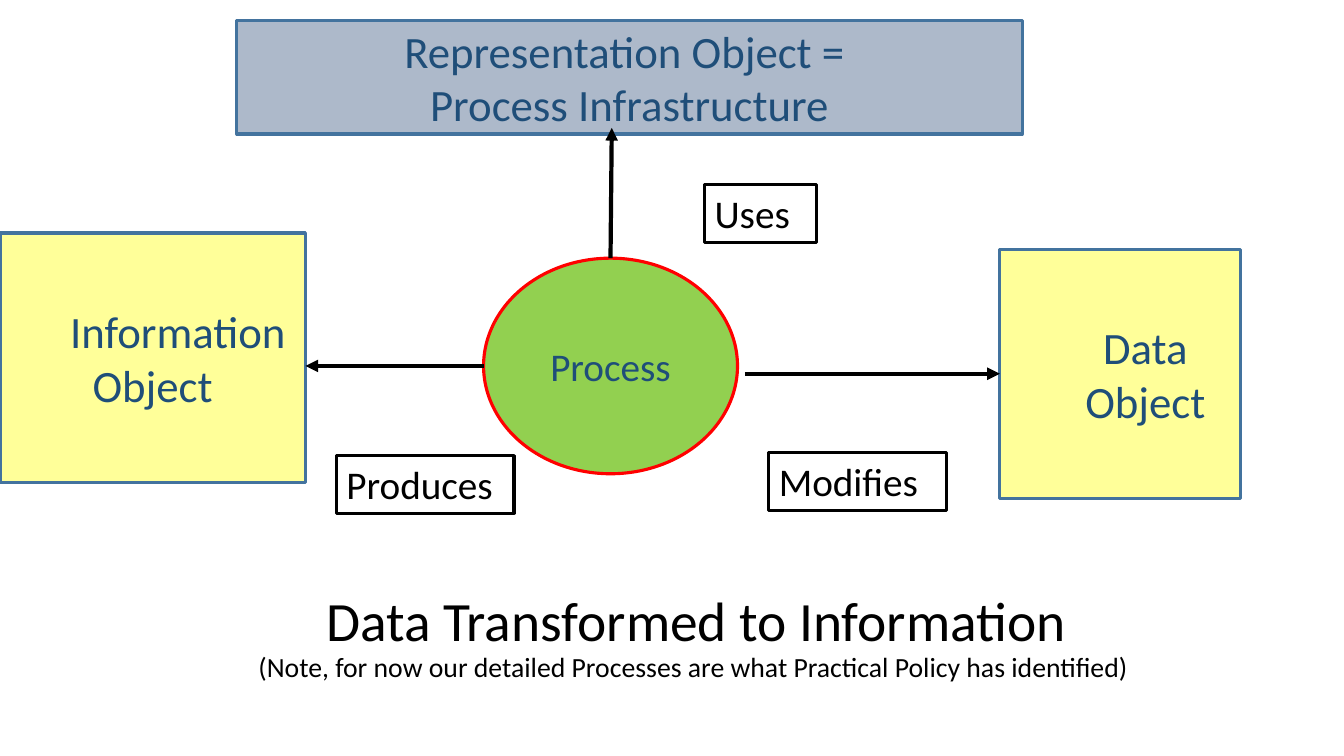
import pptx
import pptx.util
import pptx.dml.color
import pptx.enum.shapes
import pptx.enum.text
import pptx.oxml.ns
import lxml.etree

Pt = pptx.util.Pt
Shape = pptx.enum.shapes.MSO_SHAPE
Align = pptx.enum.text.PP_ALIGN
Anchor = pptx.enum.text.MSO_ANCHOR

FONT = "Calibri"
HUES = {"ink": "000000", "navy": "1F4E79", "edge": "43739E", "red": "FF0000",
        "yellow": "FFFF99", "slate": "ADB9CA", "green": "92D050"}

# Each line of text: (words, size, left indent)
TITLE = [("Data Transformed to Information", 39.6, 0),
         ("(Note, for now our detailed Processes are what Practical Policy"
          " has identified) ", 19.8, 0)]
TITLE_BOX = (169.2, 405.4, 656, 100.8)

# name: (preset, box, fill, edge, lines)
NODES = {
    "data": (Shape.RECTANGLE, (714.2, 178, 172, 178), "yellow", "edge",
             [("Data", 32, 36), ("Object", 32, 36)]),
    "frame": (Shape.RECTANGLE, (169.2, 14.4, 561, 81.4), "slate", "edge",
              [("Representation Object = ", 32, 0),
               ("Process Infrastructure", 32, 0)]),
    "process": (Shape.OVAL, (345.4, 184.4, 181.4, 154), "green", "red",
                [("Process", 28, 0)]),
    "info": (Shape.RECTANGLE, (0, 166.4, 218.2, 178), "yellow", "edge",
             [("Information", 32, 36), ("Object", 32, 0)]),
}
LABELS = [("Uses", 503.4, 131.8, 80), ("Modifies", 549.2, 323.4, 126.8),
          ("Produces", 240.4, 325.4, 126.8)]
LABEL_HIGH = 41.2

# (start, end, (node, site) joined at start, (node, site) joined at end)
ARROWS = [((532, 267), (714.2, 267), None, ("data", 1)),
          ((345.4, 261.4), (218.2, 261.4), None, None),
          ((436, 184.4), (437, 91.4), ("process", 0), None)]


def color(name):
    return pptx.dml.color.RGBColor.from_string(HUES[name])


def write(shape, lines, hue="ink", align=Align.CENTER, anchor=Anchor.MIDDLE,
          space=1.0):
    frame = shape.text_frame
    frame.word_wrap = True
    frame.vertical_anchor = anchor
    for i, (words, size, indent) in enumerate(lines):
        para = frame.add_paragraph() if i else frame.paragraphs[0]
        para.alignment = align
        para.line_spacing = space
        if indent:
            para._p.get_or_add_pPr().set("marL", str(Pt(indent)))
        run = para.add_run()
        run.text = words
        run.font.name = FONT
        run.font.size = Pt(size)
        run.font.color.rgb = color(hue)


def add_node(slide, preset, box, fill, edge):
    node = slide.shapes.add_shape(preset, *map(Pt, box))
    node.shadow.inherit = False
    if fill:
        node.fill.solid()
        node.fill.fore_color.rgb = color(fill)
    else:
        node.fill.background()
    node.line.color.rgb = color(edge)
    node.line.width = Pt(2.25)
    return node


def add_arrow(slide, start, end):
    arrow = slide.shapes.add_connector(
        pptx.enum.shapes.MSO_CONNECTOR.STRAIGHT, *map(Pt, start + end))
    arrow.line.color.rgb = color("ink")
    arrow.line.width = Pt(3)
    qn = pptx.oxml.ns.qn
    tail = lxml.etree.SubElement(arrow.line._get_or_add_ln(), qn("a:tailEnd"))
    tail.set("type", "triangle")
    lxml.etree.SubElement(arrow._element.spPr, qn("a:effectLst"))
    return arrow


def main():
    deck = pptx.Presentation()
    deck.slide_width, deck.slide_height = Pt(960), Pt(540)
    slide = deck.slides.add_slide(deck.slide_layouts[6])

    title = slide.shapes.add_textbox(*map(Pt, TITLE_BOX))
    write(title, TITLE, space=0.9)

    nodes = {}
    for name, (preset, box, fill, edge, lines) in NODES.items():
        nodes[name] = add_node(slide, preset, box, fill, edge)
        write(nodes[name], lines, hue="navy")

    for words, left, top, wide in LABELS:
        label = add_node(slide, Shape.RECTANGLE, (left, top, wide, LABEL_HIGH),
                         None, "ink")
        write(label, [(words, 28, 0)], align=Align.LEFT, anchor=Anchor.TOP)

    for start, end, source, target in ARROWS:
        arrow = add_arrow(slide, start, end)
        if source:
            arrow.begin_connect(nodes[source[0]], source[1])
        if target:
            arrow.end_connect(nodes[target[0]], target[1])

    deck.save("out.pptx")


if __name__ == "__main__":
    main()
